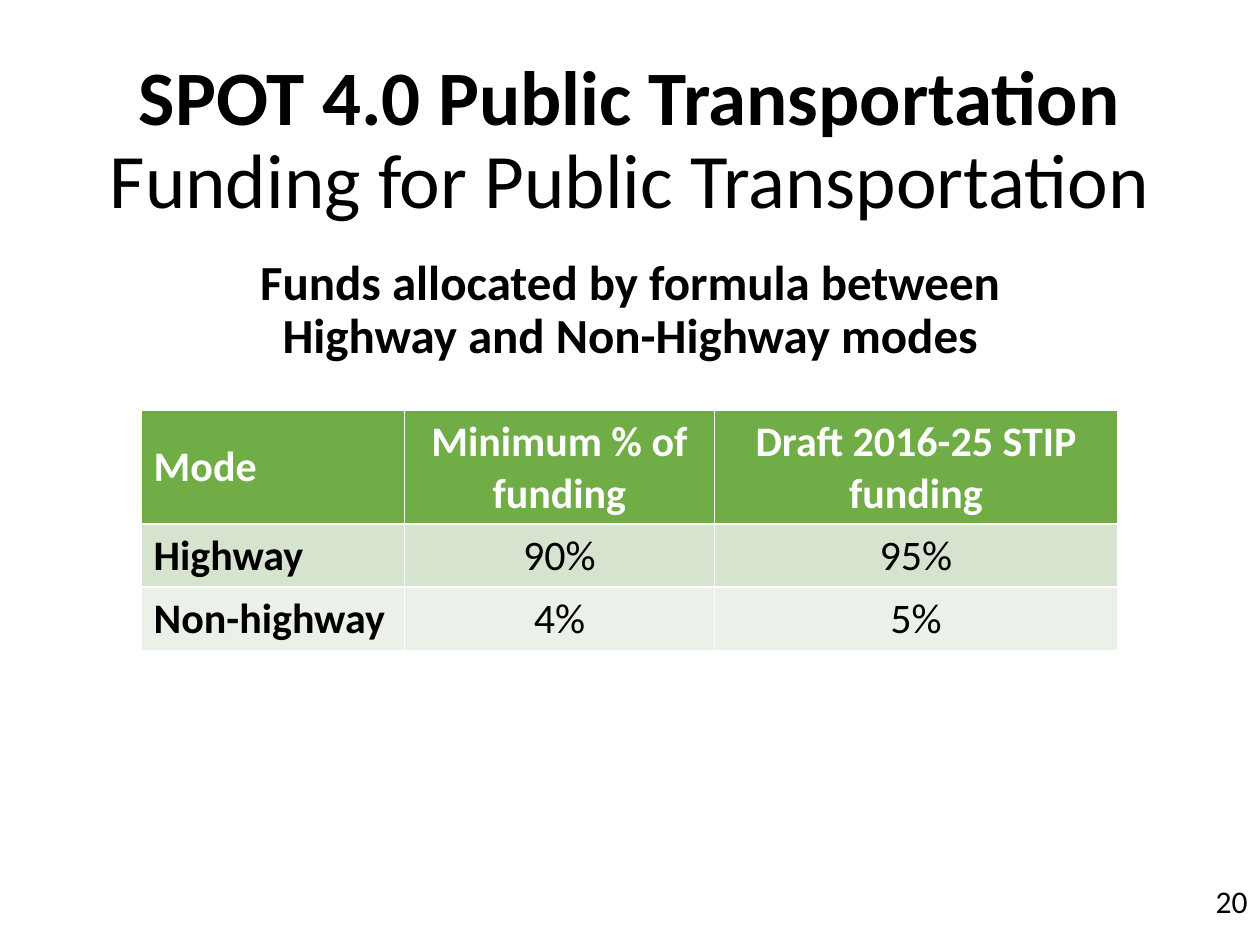
"""Build the public transportation funding slide."""
from dataclasses import dataclass

from pptx import Presentation
from pptx.dml.color import RGBColor
from pptx.enum.text import MSO_ANCHOR, PP_ALIGN
from pptx.util import Inches, Pt

LEFT, CENTER, RIGHT = PP_ALIGN.LEFT, PP_ALIGN.CENTER, PP_ALIGN.RIGHT
TOP, MIDDLE = MSO_ANCHOR.TOP, MSO_ANCHOR.MIDDLE


@dataclass(frozen=True)
class Theme:
    """Colours and type sizes."""
    font: str = "Calibri"
    ink: str = "000000"
    header_ink: str = "FFFFFF"
    header_fill: str = "70AD47"
    row_fills: tuple = ("D5E3CF", "EBF1E9")
    title: int = 44
    subtitle: int = 28
    table: int = 24
    page: int = 18


class SlideBuilder:
    """Adds styled elements to one slide."""

    def __init__(self, slide, theme):
        self.slide = slide
        self.theme = theme

    def add_runs(self, paragraph, runs, size, color, **layout):
        """Fill a paragraph with (text, bold) runs, breaking at newlines."""
        for key, value in layout.items():
            setattr(paragraph, key, value)
        for text, bold in runs:
            for index, line in enumerate(text.split("\n")):
                if index:
                    paragraph.add_line_break()
                run = paragraph.add_run()
                run.text = line
                formats = {"name": self.theme.font, "size": Pt(size), "bold": bold}
                for key, value in formats.items():
                    setattr(run.font, key, value)
                run.font.color.rgb = RGBColor.from_string(color)

    def text(self, box, runs, size, anchor=TOP, **layout):
        """Add a wrapped text box."""
        frame = self.slide.shapes.add_textbox(*map(Inches, box)).text_frame
        frame.word_wrap = True
        frame.vertical_anchor = anchor
        self.add_runs(frame.paragraphs[0], runs, size, self.theme.ink, **layout)

    def table(self, left, top, widths, heights, rows):
        """Add a table with a header row and a bold first column."""
        theme = self.theme
        box = map(Inches, (left, top, sum(widths), sum(heights)))
        grid = self.slide.shapes.add_table(len(rows), len(widths), *box).table
        for column, width in zip(grid.columns, widths):
            column.width = Inches(width)
        for row, height in zip(grid.rows, heights):
            row.height = Inches(height)
        fills = (theme.header_fill, *theme.row_fills)
        for r, (values, fill) in enumerate(zip(rows, fills)):
            for c, value in enumerate(values):
                cell = grid.cell(r, c)
                cell.vertical_anchor = MIDDLE
                cell.fill.solid()
                cell.fill.fore_color.rgb = RGBColor.from_string(fill)
                self.add_runs(
                    cell.text_frame.paragraphs[0],
                    [(value, r == 0 or c == 0)],
                    theme.table,
                    theme.ink if r else theme.header_ink,
                    alignment=CENTER if c else LEFT,
                )


def main():
    """Create and save the presentation."""
    deck = Presentation()
    deck.slide_width, deck.slide_height = Inches(10), Inches(7.5)
    theme = Theme()
    builder = SlideBuilder(deck.slides.add_slide(deck.slide_layouts[6]), theme)

    builder.text((7.75, 6.95, 2.25, 0.4), [("20", False)], theme.page, alignment=RIGHT)
    builder.text(
        (0.69, 0.4, 8.62, 1.45),
        [("SPOT 4.0 Public Transportation ", True),
         ("Funding for Public Transportation", False)],
        theme.title, MIDDLE, alignment=CENTER, line_spacing=0.9,
    )
    builder.text(
        (0.69, 2, 8.62, 4.76),
        [("Funds allocated by formula between\nHighway and Non-Highway modes", True)],
        theme.subtitle, alignment=CENTER, line_spacing=0.9, space_before=Pt(10),
    )
    builder.table(
        1.12, 3.26, (2.09, 2.46, 3.2), (0.9, 0.5, 0.5),
        [("Mode", "Minimum % of funding", "Draft 2016-25 STIP funding"),
         ("Highway", "90%", "95%"),
         ("Non-highway", "4%", "5%")],
    )
    deck.save("out.pptx")


if __name__ == "__main__":
    main()
